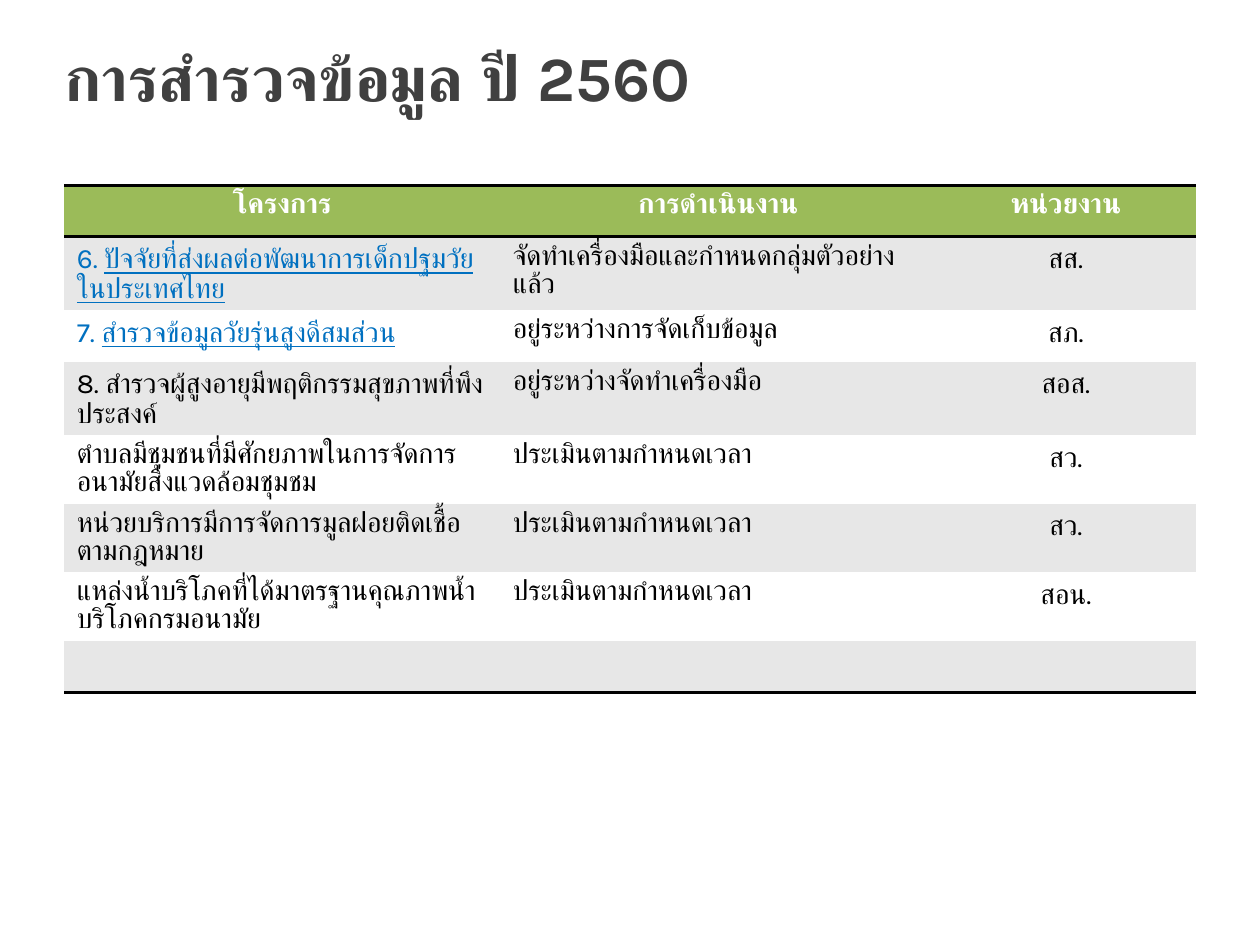
from dataclasses import dataclass

from lxml import etree
from pptx import Presentation
from pptx import util as u
from pptx.dml.color import RGBColor
from pptx.enum import text
from pptx.oxml import ns


@dataclass(frozen=True)
class Theme:
    font: str = "Karla"
    title_size: int = 36
    table_size: int = 16
    rule_width: int = 2
    title: str = "404040"
    header_fill: str = "9BBB59"
    header_text: str = "FFFFFF"
    body: str = "000000"
    survey: str = "0070C0"
    band: str = "E7E7E7"
    plain: str = "FFFFFF"
    rule: str = "000000"


THEME = Theme()
PLAIN_TABLE_STYLE = "{2D5ABB26-0587-4C30-8999-92F81FD0307C}"

HEADINGS = ["โครงการ", "การดำเนินงาน", "หน่วยงาน"]
# Number of a highlighted survey (or None), project, progress, office
PROJECTS = [
    ("6. ", "ปัจจัยที่ส่งผลต่อพัฒนาการเด็กปฐมวัยในประเทศไทย",
     "จัดทำเครื่องมือและกำหนดกลุ่มตัวอย่างแล้ว", "สส."),
    ("7. ", "สำรวจข้อมูลวัยรุ่นสูงดีสมส่วน", "อยู่ระหว่างการจัดเก็บข้อมูล", "สภ."),
    (None, "8. สำรวจผู้สูงอายุมีพฤติกรรมสุขภาพที่พึงประสงค์",
     "อยู่ระหว่างจัดทำเครื่องมือ", "สอส."),
    (None, "ตำบลมีชุมชนที่มีศักยภาพในการจัดการอนามัยสิ่งแวดล้อมชุมชม",
     "ประเมินตามกำหนดเวลา", "สว."),
    (None, "หน่วยบริการมีการจัดการมูลฝอยติดเชื้อตามกฎหมาย",
     "ประเมินตามกำหนดเวลา", "สว."),
    (None, "แหล่งน้ำบริโภคที่ได้มาตรฐานคุณภาพน้ำบริโภคกรมอนามัย",
     "ประเมินตามกำหนดเวลา", "สอน."),
]
COLUMN_WIDTHS = [3.46, 3.46, 2.06]
ROW_HEIGHT = 0.41


def add_run(paragraph, words, color, size=THEME.table_size, **extra):
    run = paragraph.add_run()
    run.text = words
    formats = {"name": THEME.font, "size": u.Pt(size), "bold": False, **extra}
    for attribute, value in formats.items():
        setattr(run.font, attribute, value)
    run.font.color.rgb = RGBColor.from_string(color)


def fill_cell(cell, color):
    cell.fill.solid()
    cell.fill.fore_color.rgb = RGBColor.from_string(color)


def rule_cell(cell, *edges):
    """Draw rules on the given edges, in the order lnT, lnB."""
    properties = cell._tc.get_or_add_tcPr()
    for position, edge in enumerate(edges):
        line = etree.Element(ns.qn(f"a:{edge}"), w=str(u.Pt(THEME.rule_width)))
        solid = etree.SubElement(line, ns.qn("a:solidFill"))
        etree.SubElement(solid, ns.qn("a:srgbClr"), val=THEME.rule)
        properties.insert(position, line)


def set_title(slide, words):
    title = slide.shapes.title
    box = {"left": 0, "top": 0.02, "width": 10, "height": 1.17}
    for attribute, value in box.items():
        setattr(title, attribute, u.Inches(value))
    frame = title.text_frame
    frame.margin_left = u.Inches(0.51)
    frame.vertical_anchor = text.MSO_ANCHOR.MIDDLE
    heading = frame.paragraphs[0]
    heading.alignment = text.PP_ALIGN.LEFT
    add_run(heading, words, THEME.title, THEME.title_size, bold=True)


def add_project_table(slide):
    row_count = len(PROJECTS) + 2  # heading and an empty closing row
    frame = slide.shapes.add_table(
        row_count, len(HEADINGS), u.Inches(0.51), u.Inches(1.47),
        u.Inches(sum(COLUMN_WIDTHS)), u.Inches(ROW_HEIGHT * row_count))
    table = frame.table
    table._tbl.tblPr.find(ns.qn("a:tableStyleId")).text = PLAIN_TABLE_STYLE
    for column, width in zip(table.columns, COLUMN_WIDTHS):
        column.width = u.Inches(width)
    for row in table.rows:
        row.height = u.Inches(ROW_HEIGHT)

    # Fills and rules
    for index, row in enumerate(table.rows):
        for cell in row.cells:
            if index == 0:
                fill_cell(cell, THEME.header_fill)
                rule_cell(cell, "lnT", "lnB")
            else:
                fill_cell(cell, THEME.band if index % 2 else THEME.plain)
            if index == row_count - 1:
                rule_cell(cell, "lnB")

    # Headings
    for cell, words in zip(table.rows[0].cells, HEADINGS):
        heading = cell.text_frame.paragraphs[0]
        heading.alignment = text.PP_ALIGN.CENTER
        add_run(heading, words, THEME.header_text, bold=True)

    # Projects
    for index, (number, project, progress, office) in enumerate(PROJECTS, 1):
        name_cell, progress_cell, office_cell = (
            cell.text_frame.paragraphs[0] for cell in table.rows[index].cells)
        if number:
            add_run(name_cell, number, THEME.survey)
            add_run(name_cell, project, THEME.survey, underline=True)
        else:
            add_run(name_cell, project, THEME.body)
        add_run(progress_cell, progress, THEME.body)
        office_cell.alignment = text.PP_ALIGN.CENTER
        add_run(office_cell, office, THEME.body)


def main():
    deck = Presentation()
    deck.slide_width, deck.slide_height = u.Inches(10), u.Inches(7.5)
    slide = deck.slides.add_slide(deck.slide_layouts[5])
    set_title(slide, "การสำรวจข้อมูล ปี 2560")
    add_project_table(slide)
    deck.save("out.pptx")


if __name__ == "__main__":
    main()
